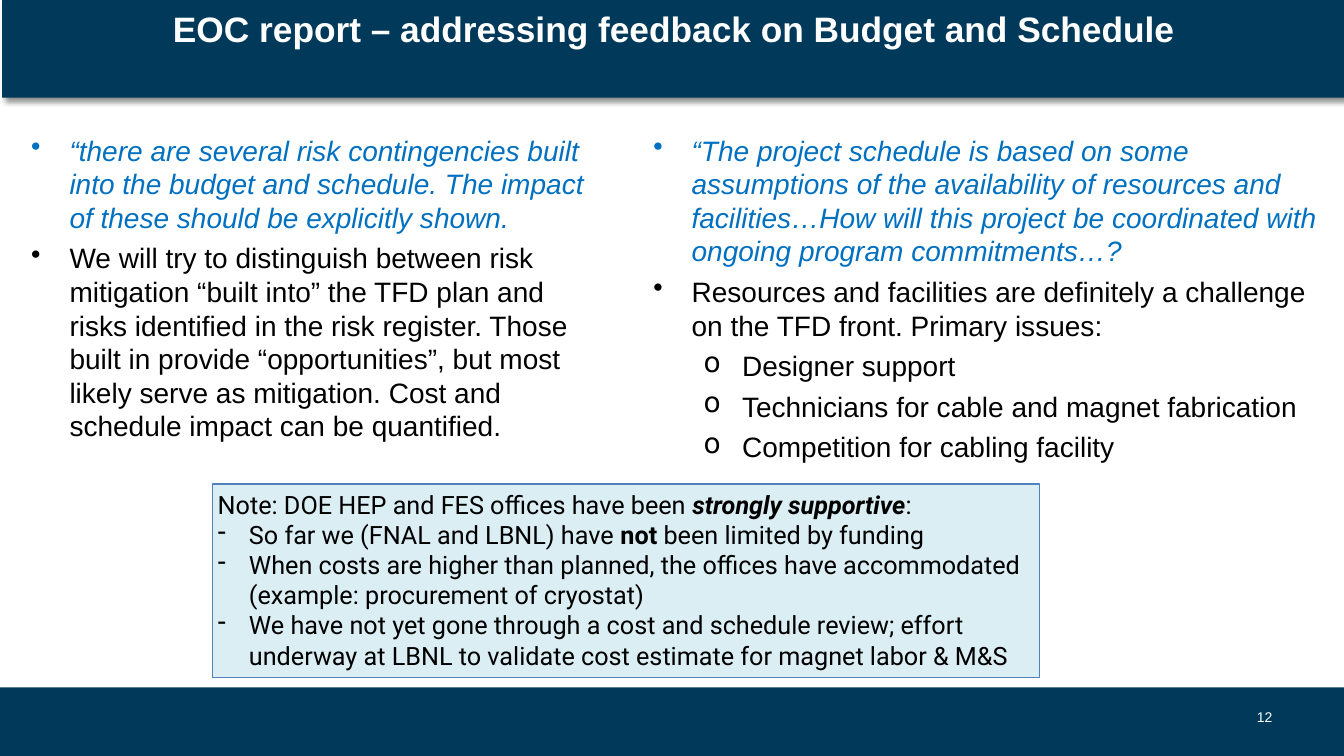
from lxml.etree import SubElement
from pptx import Presentation
from pptx.dml.color import RGBColor
from pptx.enum.shapes import MSO_SHAPE
from pptx.enum.text import MSO_ANCHOR, MSO_AUTO_SIZE, PP_ALIGN
from pptx.oxml.ns import qn
from pptx.util import Emu, Pt

PX = 9144  # 100 px to the inch
NAVY, WHITE, BLACK = "00395A", "FFFFFF", "000000"
QUOTE = {"color": "0070C0", "italic": True}

# Each paragraph: bullet, left indent in px, runs of (text, format)
BUDGET = [
    ("•", 38, [("“there are several risk contingencies built into the budget and schedule. "
                "The impact of these should be explicitly shown.", QUOTE)]),
    ("•", 38, [("We will try to distinguish between risk mitigation “built into” the TFD plan "
                "and risks identified in the risk register. Those built in provide "
                "“opportunities”, but most likely serve as mitigation. Cost and schedule "
                "impact can be quantified.", {})]),
]
SCHEDULE = [
    ("•", 38, [("“The project schedule is based on some assumptions of the availability of "
                "resources and facilities…How will this project be coordinated with ongoing "
                "program commitments…?", QUOTE)]),
    ("•", 38, [("Resources and facilities are definitely a challenge on the TFD front. "
                "Primary issues:", {})]),
    ("o", 88, [("Designer support", {})]),
    ("o", 88, [("Technicians for cable and magnet fabrication", {})]),
    ("o", 88, [("Competition for cabling facility", {})]),
]
NOTE = [
    (None, 0, [("Note: DOE HEP and FES offices have been ", {}),
               ("strongly supportive", {"bold": True, "italic": True}), (":", {})]),
    ("-", 31, [("So far we (FNAL and LBNL) have ", {}), ("not", {"bold": True}),
               (" been limited by funding", {})]),
    ("-", 31, [("When costs are higher than planned, the offices have accommodated "
                "(example: procurement of cryostat)", {})]),
    ("-", 31, [("We have not yet gone through a cost and schedule review; effort underway at "
                "LBNL to validate cost estimate for magnet labor & M&S", {})]),
]


def rgb(value):
    return RGBColor.from_string(value)


def box(*lengths):
    return [Emu(length * PX) for length in lengths]


def add_text(paragraph, text, font="Arial", size=20, color=BLACK, bold=False, italic=False):
    run = paragraph.add_run()
    run.text = text
    run.font.name, run.font.size = font, Pt(size)
    run.font.bold, run.font.italic = bold, italic
    run.font.color.rgb = rgb(color)


def prepare_frame(shape, anchor=MSO_ANCHOR.TOP, wrap=True, top_inset=5):
    frame = shape.text_frame
    frame.auto_size = MSO_AUTO_SIZE.NONE
    frame.word_wrap, frame.vertical_anchor = wrap, anchor
    frame.margin_left = frame.margin_right = frame.margin_bottom = Emu(5 * PX)
    frame.margin_top = Emu(top_inset * PX)
    return frame


def set_bullet(paragraph, character, indent, hanging):
    properties = paragraph._p.get_or_add_pPr()
    properties.set("marL", str(indent * PX))
    properties.set("indent", str(-hanging * PX))
    SubElement(properties, qn("a:buChar"), char=character)


def fill_list(shape, items, hanging, gap=0, **text_format):
    frame = prepare_frame(shape)
    for index, (bullet, indent, runs) in enumerate(items):
        paragraph = frame.add_paragraph() if index else frame.paragraphs[0]
        paragraph.alignment = PP_ALIGN.LEFT
        if bullet:
            set_bullet(paragraph, bullet, indent, hanging)
        paragraph.space_before = Pt(gap if index else 0)
        for text, emphasis in runs:
            add_text(paragraph, text, **{**text_format, **emphasis})


def add_rectangle(slide, position, fill, line=None):
    shape = slide.shapes.add_shape(MSO_SHAPE.RECTANGLE, *box(*position))
    shape.shadow.inherit = False
    shape.fill.solid()
    shape.fill.fore_color.rgb = rgb(fill)
    if line:
        shape.line.color.rgb = rgb(line)
        shape.line.width = Pt(1)
    else:
        shape.line.fill.background()
    return shape


def add_shadow(shape):
    effects = SubElement(shape._element.spPr, qn("a:effectLst"))
    shadow = SubElement(effects, qn("a:outerShdw"), blurRad=str(Pt(4)), dist=str(Pt(3)),
                        dir=str(45 * 60000), algn="tl", rotWithShape="0")
    color = SubElement(shadow, qn("a:srgbClr"), val=BLACK)
    SubElement(color, qn("a:alpha"), val="43000")


def set_title(slide, text):
    title = slide.shapes.title
    title.left, title.top, title.width, title.height = box(2, -3, 1333, 100)
    title.fill.solid()
    title.fill.fore_color.rgb = rgb(NAVY)
    add_shadow(title)
    paragraph = prepare_frame(title, top_inset=10).paragraphs[0]
    paragraph.alignment = PP_ALIGN.CENTER
    add_text(paragraph, text, size=25.2, color=WHITE, bold=True)


def add_page_number(slide, number):
    shape = slide.shapes.add_textbox(*box(1240, 699, 27, 25))
    paragraph = prepare_frame(shape, MSO_ANCHOR.MIDDLE, wrap=False).paragraphs[0]
    paragraph.alignment = PP_ALIGN.RIGHT
    add_text(paragraph, number, size=10, color=WHITE)


def main():
    presentation = Presentation()
    presentation.slide_width, presentation.slide_height = box(1333, 750)
    slide = presentation.slides.add_slide(presentation.slide_layouts[5])
    add_rectangle(slide, (0, 682, 1333, 68), NAVY)
    set_title(slide, "EOC report – addressing feedback on Budget and Schedule")
    for left, width, items in ((26, 573, BUDGET), (643, 676, SCHEDULE)):
        column = slide.shapes.add_textbox(*box(left, 127, width, 515))
        fill_list(column, items, hanging=38, gap=5)
    note = add_rectangle(slide, (211, 480, 820, 192), "DBEEF4", "4F81BD")
    fill_list(note, NOTE, hanging=31, font="Roboto", size=18)
    add_page_number(slide, "12")
    presentation.save("out.pptx")


if __name__ == "__main__":
    main()
